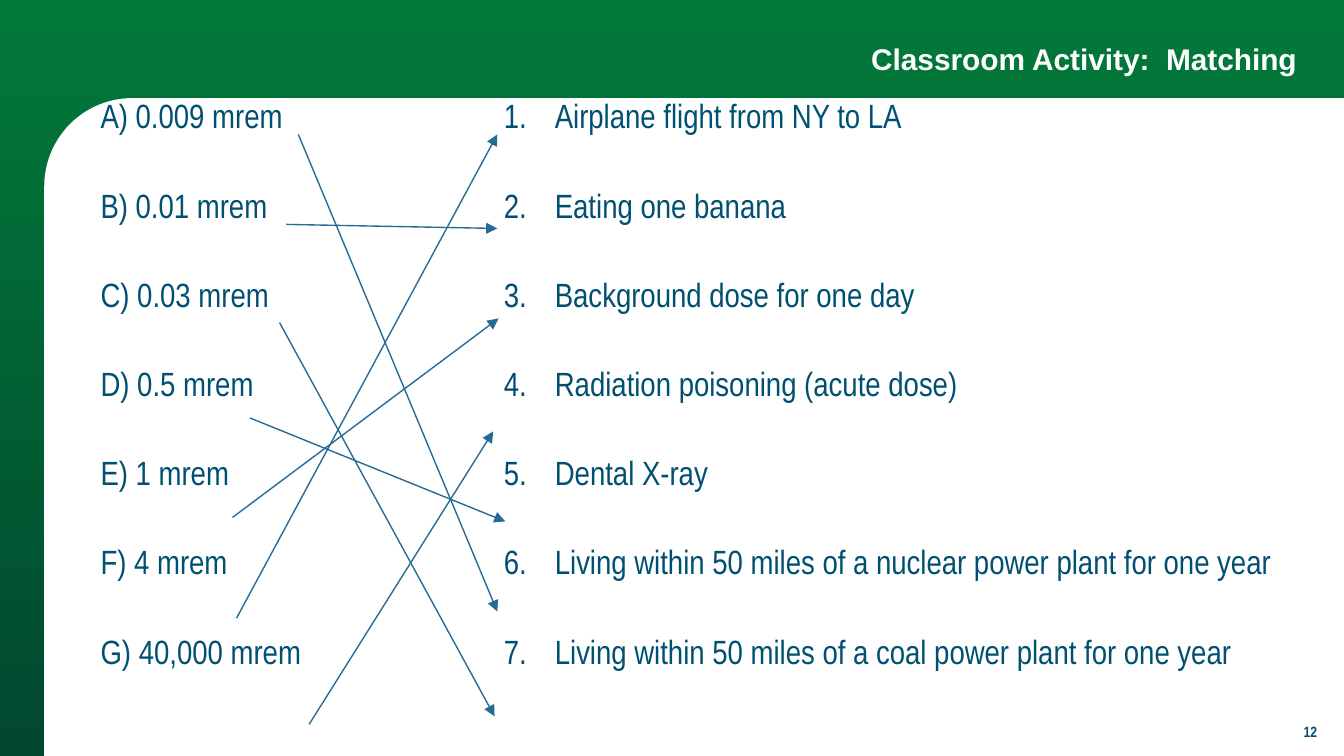
from lxml import etree
from pptx import Presentation
from pptx import util as u
from pptx.dml.color import RGBColor
from pptx.enum import shapes, text
from pptx.oxml import ns

COLORS = {
    "green": "027939",
    "dark_green": "01482F",
    "white": "FFFFFF",
    "body": "005072",
    "number": "004E74",
    "arrow": "256B94",
}
DOSES = ["0.009", "0.01", "0.03", "0.5", "1", "4", "40,000"]
SOURCES = [
    "Airplane flight from NY to LA",
    "Eating one banana",
    "Background dose for one day",
    "Radiation poisoning (acute dose)",
    "Dental X-ray",
    "Living within 50 miles of a nuclear power plant for one year",
    "Living within 50 miles of a coal power plant for one year",
]
MATCHES = [
    ((1.73, 3.85), (3.71, 2.37)),
    ((1.86, 3.11), (3.76, 3.88)),
    ((1.76, 4.6), (3.7, 1)),
    ((2.3, 5.39), (3.67, 3.21)),
    ((2.08, 2.4), (3.68, 5.33)),
    ((2.13, 1.67), (3.7, 1.7)),
    ((2.22, 1), (3.7, 4.55)),
]


def rgb(name):
    return RGBColor.from_string(COLORS[name])


def add_element(parent, tag, **attributes):
    return etree.SubElement(parent, ns.qn(tag), attributes)


def paint_background(page):
    fill = page.background.fill
    fill.gradient()
    fill.gradient_angle = 270
    for stop, name in zip(fill.gradient_stops, ("green", "dark_green")):
        stop.color.rgb = rgb(name)


def add_panel(page):
    panel = page.shapes.add_shape(
        shapes.MSO_SHAPE.ROUND_1_RECTANGLE,
        u.Inches(0.33), u.Inches(0.73), u.Inches(9.67), u.Inches(4.9))
    panel.adjustments[0] = 0.134
    panel.shadow.inherit = False
    panel.fill.solid()
    panel.fill.fore_color.rgb = rgb("white")
    panel.line.fill.background()
    panel._element.spPr.find(ns.qn("a:xfrm")).set("flipH", "1")


def add_box(page, left, top, width, height, inset=0.1):
    box = page.shapes.add_textbox(*map(u.Inches, (left, top, width, height)))
    frame = box.text_frame
    frame.word_wrap = True
    frame.margin_left = frame.margin_right = u.Inches(0.1)
    frame.margin_top = frame.margin_bottom = u.Inches(inset)
    return frame


def add_span(para, words, size, font, color, bold=False):
    span = para.add_run()
    span.text = words
    span.font.size = u.Pt(size)
    span.font.name = font
    span.font.bold = bold
    span.font.color.rgb = rgb(color)


def number_paragraph(para):
    props = para._p.get_or_add_pPr()
    props.set("marL", str(u.Inches(0.5)))
    props.set("indent", str(u.Inches(-0.38)))
    color = add_element(props, "a:buClr")
    add_element(color, "a:srgbClr", val=COLORS["number"])
    add_element(props, "a:buFont", typeface="Arial Narrow")
    add_element(props, "a:buAutoNum", type="arabicPeriod")


def add_column(page, left, width, entries, numbered=False):
    frame = add_box(page, left, 0.64, width, 4.09)
    for index, entry in enumerate(entries):
        para = frame.paragraphs[0] if index == 0 else frame.add_paragraph()
        if numbered:
            number_paragraph(para)
        para.line_spacing = u.Pt(19.4)
        if index:
            para.space_before = u.Pt(28.4)
        add_span(para, entry, 18, "Arial Narrow", "body")


def add_arrow(page, start, end):
    arrow = page.shapes.add_connector(
        shapes.MSO_CONNECTOR.STRAIGHT, *map(u.Inches, start + end))
    arrow.line.color.rgb = rgb("arrow")
    arrow.line.width = u.Pt(0.75)
    add_element(arrow.line._get_or_add_ln(), "a:tailEnd", type="triangle")
    add_element(arrow._element.spPr, "a:effectLst")


def add_title(page):
    frame = add_box(page, 0.39, 0.2, 9.36, 0.52)
    frame.vertical_anchor = text.MSO_ANCHOR.MIDDLE
    para = frame.paragraphs[0]
    para.alignment = text.PP_ALIGN.RIGHT
    para.line_spacing = 0.85
    add_span(para, "Classroom Activity:  Matching", 16, "Arial", "white", True)


def add_page_number(page):
    para = add_box(page, 7.57, 5.33, 2.33, 0.39, 0.05).paragraphs[0]
    para.alignment = text.PP_ALIGN.RIGHT
    add_span(para, "12", 8, "Arial Narrow", "body", True)


def main():
    deck = Presentation()
    deck.slide_width = u.Inches(10)
    deck.slide_height = u.Inches(10 * 9 / 16)
    page = deck.slides.add_slide(deck.slide_layouts[6])
    paint_background(page)
    add_panel(page)
    add_title(page)
    doses = [f"{letter}) {dose} mrem" for letter, dose in zip("ABCDEFG", DOSES)]
    add_column(page, 0.65, 4.5, doses)
    add_column(page, 3.53, 6.38, SOURCES, numbered=True)
    add_page_number(page)
    for start, end in MATCHES:
        add_arrow(page, start, end)
    deck.save("out.pptx")


if __name__ == "__main__":
    main()
